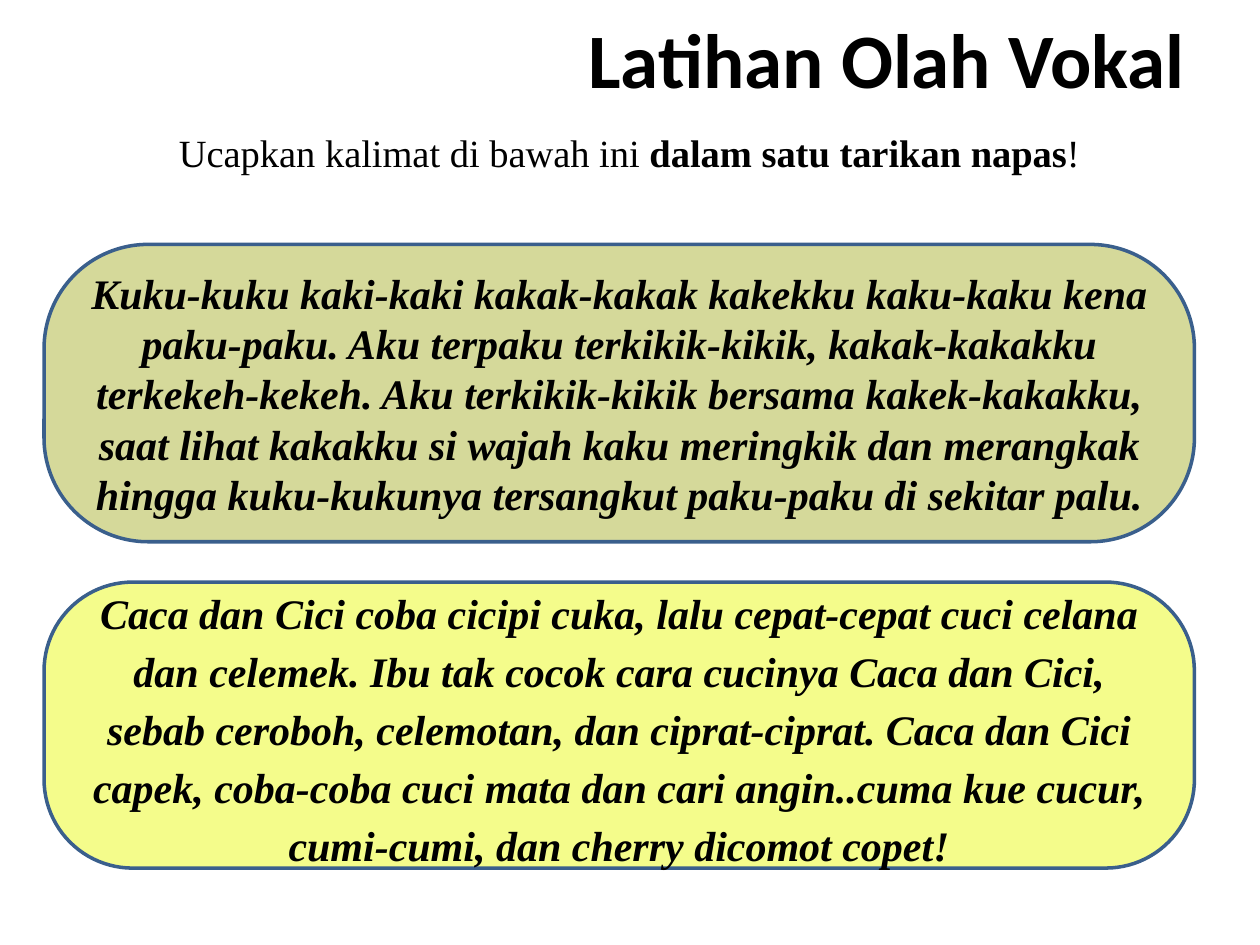
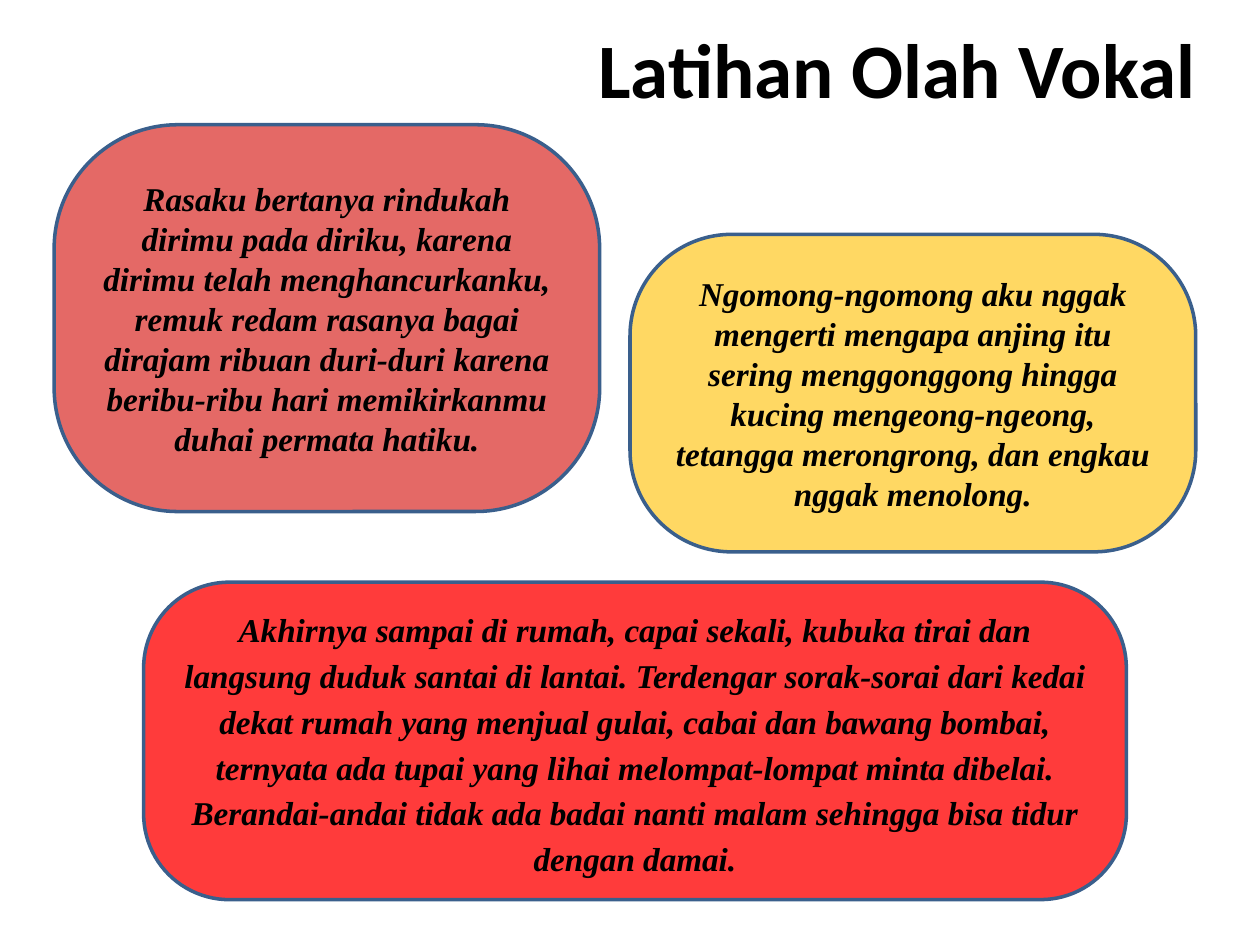
"""Build two slides of vocal exercises with tongue twisters in rounded boxes."""
from lxml import etree
from pptx import Presentation
from pptx.dml.color import RGBColor
from pptx.enum.shapes import MSO_SHAPE
from pptx.enum.text import MSO_ANCHOR, PP_ALIGN
from pptx.oxml.ns import qn
from pptx.util import Inches, Pt

ROUND = MSO_SHAPE.ROUNDED_RECTANGLE
MIDDLE = MSO_ANCHOR.MIDDLE
TOP = MSO_ANCHOR.TOP
CENTER = PP_ALIGN.CENTER

BLACK = RGBColor(0x00, 0x00, 0x00)
BLUE = RGBColor(0x3A, 0x5F, 0x8C)
OLIVE = RGBColor(0x99, 0xA4, 0x0C)
LEMON = RGBColor(0xE9, 0xF9, 0x13)
RED = RGBColor(0xFF, 0x00, 0x00)
AMBER = RGBColor(0xFF, 0xC0, 0x00)
BRICK = RGBColor(0xDB, 0x35, 0x31)

HEAD_FONT = "Calibri"
BODY_FONT = "Times New Roman"
TITLE = "Latihan Olah Vokal"
TITLE_SIZE = (5.82, 0.97)

PROMPT = [
    ("Ucapkan kalimat di bawah ini ", False),
    ("dalam satu tarikan napas", True),
    ("!", False),
]
PROMPT_AREA = (0.43, 0.92, 9.13, 0.6)

SLIDES = [
    {
        "title": (4.13, -0.03),
        "prompt": PROMPT,
        "size": 24,
        "boxes": [
            {
                "area": (0.35, 1.94, 9.13, 2.36), "curve": 0.35,
                "fill": OLIVE, "alpha": 41, "loose": False,
                "text": "Kuku-kuku kaki-kaki kakak-kakak kakekku kaku-kaku kena "
                        "paku-paku. Aku terpaku terkikik-kikik, kakak-kakakku "
                        "terkekeh-kekeh. Aku terkikik-kikik bersama kakek-kakakku, "
                        "saat lihat kakakku si wajah kaku meringkik dan merangkak "
                        "hingga kuku-kukunya tersangkut paku-paku di sekitar palu.",
            },
            {
                "area": (0.35, 4.62, 9.13, 2.27), "curve": 0.31,
                "fill": LEMON, "alpha": 49, "loose": True,
                "text": "Caca dan Cici coba cicipi cuka, lalu cepat-cepat cuci celana "
                        "dan celemek. Ibu tak cocok cara cucinya Caca dan Cici, "
                        "sebab ceroboh, celemotan, dan ciprat-ciprat. Caca dan Cici "
                        "capek, coba-coba cuci mata dan cari angin..cuma kue cucur, "
                        "cumi-cumi, dan cherry dicomot copet!",
            },
        ],
    },
    {
        "title": (4.21, 0.05),
        "prompt": [],
        "size": 19,
        "boxes": [
            {
                "area": (1.14, 4.62, 7.8, 2.52), "curve": 0.27,
                "fill": RED, "alpha": 77, "loose": True,
                "text": "Akhirnya sampai di rumah, capai sekali, kubuka tirai dan "
                        "langsung duduk santai di lantai. Terdengar sorak-sorai dari "
                        "kedai dekat rumah yang menjual gulai, cabai dan bawang "
                        "bombai, ternyata ada tupai yang lihai melompat-lompat minta "
                        "dibelai. Berandai-andai tidak ada badai nanti malam sehingga "
                        "bisa tidur dengan damai.",
            },
            {
                "area": (5, 1.86, 4.49, 2.52), "curve": 0.32,
                "fill": AMBER, "alpha": 61, "loose": False,
                "text": "Ngomong-ngomong aku nggak mengerti mengapa anjing itu "
                        "sering menggonggong hingga kucing mengeong-ngeong, "
                        "tetangga merongrong, dan engkau nggak menolong.",
            },
            {
                "area": (0.43, 0.99, 4.33, 3.07), "curve": 0.32,
                "fill": BRICK, "alpha": 74, "loose": False,
                "text": "Rasaku bertanya rindukah dirimu pada diriku, karena "
                        "dirimu telah menghancurkanku, remuk redam rasanya bagai "
                        "dirajam ribuan duri-duri karena beribu-ribu hari "
                        "memikirkanmu duhai permata hatiku.",
            },
        ],
    },
]


def write(shape, runs, font, size, italic=False, loose=False, anchor=MIDDLE):
    frame = shape.text_frame
    frame.word_wrap = True
    frame.vertical_anchor = anchor
    para = frame.paragraphs[0]
    para.alignment = CENTER
    if loose:
        para.line_spacing = 1.15
        para.space_before = Pt(size * 0.2)
        para.space_after = Pt(5)
    for text, bold in runs:
        run = para.add_run()
        run.text = text
        run.font.name = font
        run.font.size = Pt(size)
        run.font.bold = bold
        run.font.italic = italic
        run.font.color.rgb = BLACK


def add_text(slide, area, runs, font, size, **style):
    box = slide.shapes.add_textbox(*map(Inches, area))
    write(box, runs, font, size, **style)


def add_box(slide, box, size):
    shape = slide.shapes.add_shape(ROUND, *map(Inches, box["area"]))
    shape.adjustments[0] = box["curve"]
    shape.shadow.inherit = False
    shape.fill.solid()
    shape.fill.fore_color.rgb = box["fill"]
    color = shape.element.spPr.find(qn("a:solidFill")).find(qn("a:srgbClr"))
    etree.SubElement(color, qn("a:alpha")).set("val", str(box["alpha"] * 1000))
    shape.line.color.rgb = BLUE
    shape.line.width = Pt(2)
    write(shape, [(box["text"], True)], BODY_FONT, size,
          italic=True, loose=box["loose"])


def main():
    deck = Presentation()
    deck.slide_width, deck.slide_height = Inches(10), Inches(7.5)
    for page in SLIDES:
        slide = deck.slides.add_slide(deck.slide_layouts[6])
        add_text(slide, page["title"] + TITLE_SIZE, [(TITLE, True)], HEAD_FONT, 44)
        if page["prompt"]:
            add_text(slide, PROMPT_AREA, page["prompt"], BODY_FONT, 22,
                     loose=True, anchor=TOP)
        for box in page["boxes"]:
            add_box(slide, box, page["size"])
    deck.save("out.pptx")


if __name__ == "__main__":
    main()
